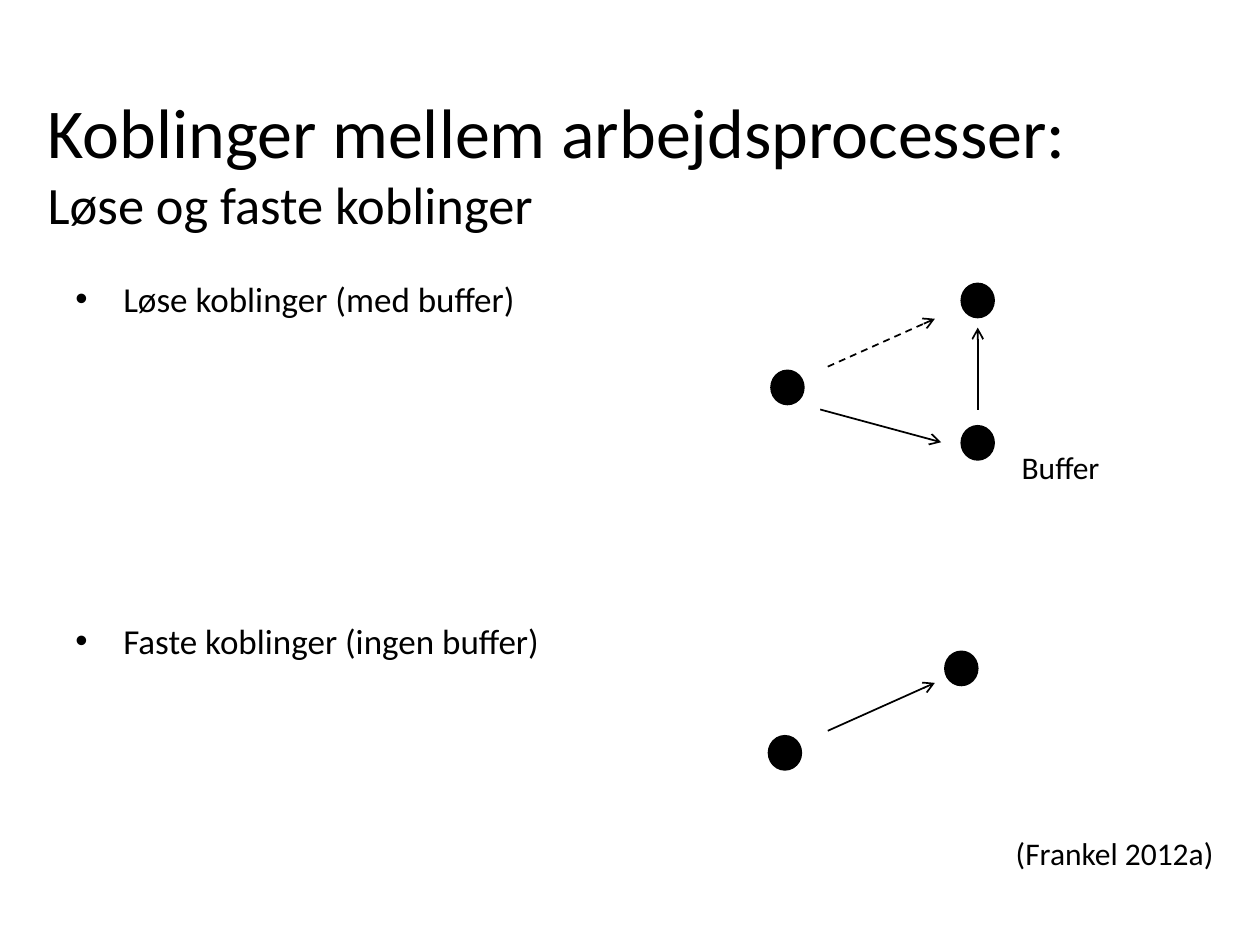
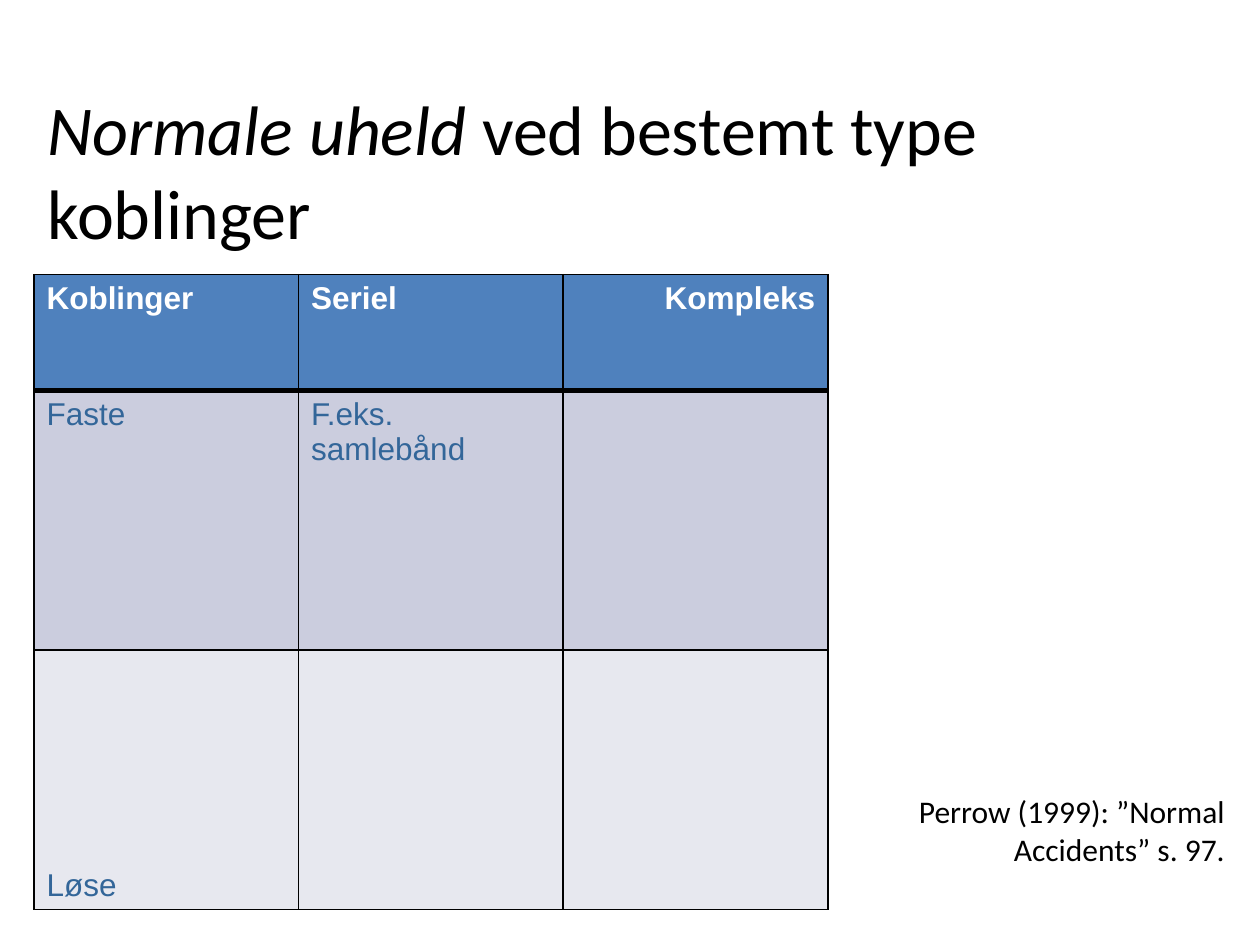
"""Build two slides on loose and tight couplings between work processes."""
from lxml.etree import SubElement
from pptx import Presentation
from pptx.dml.color import RGBColor
from pptx.enum.dml import MSO_LINE
from pptx.enum.shapes import MSO_CONNECTOR, MSO_SHAPE
from pptx.enum.text import MSO_ANCHOR, PP_ALIGN
from pptx.oxml.ns import qn
from pptx.util import Inches, Pt

COLORS = {
    "black": "000000",
    "white": "FFFFFF",
    "header": "4F81BD",
    "tight": "CBCDDE",
    "loose": "E7E8EF",
    "cell_text": "336699",
}
TITLE_SIZE, SUBTITLE_SIZE, BULLET_SIZE, NOTE_SIZE = 40, 30, 20, 18

COUPLING_TITLE = [[("Koblinger mellem arbejdsprocesser:", TITLE_SIZE, False)],
                  [("Løse og faste koblinger", SUBTITLE_SIZE, False)]]
ACCIDENT_TITLE = [[("Normale uheld ", TITLE_SIZE, True),
                   ("ved bestemt type koblinger", TITLE_SIZE, False)]]
BULLETS = [("Løse koblinger (med buffer)", 0), ("Faste koblinger (ingen buffer)", 171.5)]

NODE_SIZE = (0.26, 0.27)
NODES = [(7.63, 2.25), (6.12, 2.94), (7.63, 3.38), (6.1, 5.84), (7.5, 5.17)]
ARROWS = [
    ((6.57, 2.91), (7.42, 2.53), True),
    ((6.51, 3.25), (7.47, 3.51), False),
    ((7.76, 3.25), (7.76, 2.6), False),
    ((6.57, 5.8), (7.42, 5.42), False),
]

TABLE_ROWS = [
    ("header", 0.92, ["Koblinger", "Seriel", "Kompleks"]),
    ("tight", 2.06, ["Faste", "F.eks. samlebånd", ""]),
    ("loose", 2.06, ["Løse", "", ""]),
]
TABLE_LEFT, TABLE_TOP, COLUMN_WIDTH = 0.27, 2.18, 2.1
THIN, THICK = 1, 3


def color(name):
    return RGBColor.from_string(COLORS[name])


def add_span(para, text, size, font="Calibri", ink="black", bold=False, italic=False):
    span = para.add_run()
    span.text = text
    span.font.name = font
    span.font.size = Pt(size)
    span.font.bold = bold
    span.font.italic = italic
    span.font.color.rgb = color(ink)


def add_box(page, left, top, width, height):
    box = page.shapes.add_textbox(Inches(left), Inches(top), Inches(width), Inches(height))
    box.text_frame.word_wrap = True
    return box.text_frame


def add_title(page, top, lines):
    frame = add_box(page, 0.28, top, 9.45, 1.57)
    frame.margin_top = Inches(0.08)
    para = frame.paragraphs[0]
    for number, line in enumerate(lines):
        if number:
            para.add_line_break()
        for text, size, italic in line:
            add_span(para, text, size, italic=italic)


def add_note(page, place, text, align=PP_ALIGN.RIGHT):
    para = add_box(page, *place).paragraphs[0]
    para.alignment = align
    add_span(para, text, NOTE_SIZE)


def add_bullets(page):
    frame = add_box(page, 0.5, 1.75, 9.22, 5.46)
    frame.margin_top = Inches(0.45)
    for number, (text, gap) in enumerate(BULLETS):
        para = frame.add_paragraph() if number else frame.paragraphs[0]
        para.space_before = Pt(gap)
        properties = para._p.get_or_add_pPr()
        properties.set("marL", str(Inches(0.38)))
        properties.set("indent", str(-Inches(0.38)))
        SubElement(properties, qn("a:buFont"), typeface="Arial")
        SubElement(properties, qn("a:buChar"), char="•")
        add_span(para, text, BULLET_SIZE)


def add_node(page, left, top):
    node = page.shapes.add_shape(MSO_SHAPE.FLOWCHART_CONNECTOR, Inches(left), Inches(top),
                                 *map(Inches, NODE_SIZE))
    node.shadow.inherit = False
    node.fill.solid()
    node.fill.fore_color.rgb = color("black")
    node.line.color.rgb = color("black")
    node.line.width = Pt(1)


def add_arrow(page, start, end, dashed):
    arrow = page.shapes.add_connector(MSO_CONNECTOR.STRAIGHT, *map(Inches, start + end))
    arrow.line.color.rgb = color("black")
    arrow.line.width = Pt(1)
    if dashed:
        arrow.line.dash_style = MSO_LINE.DASH
    SubElement(arrow.line._get_or_add_ln(), qn("a:tailEnd"), type="arrow")
    SubElement(arrow._element.spPr, qn("a:effectLst"))


def set_borders(cell, top, bottom):
    properties = cell._tc.get_or_add_tcPr()
    sides = [("L", THIN), ("R", THIN), ("T", top), ("B", bottom)]
    for position, (side, width) in enumerate(sides):
        border = SubElement(properties, qn(f"a:ln{side}"), w=str(Pt(width)))
        fill = SubElement(border, qn("a:solidFill"))
        SubElement(fill, qn("a:srgbClr"), val=COLORS["black"])
        properties.insert(position, border)


def add_coupling_table(page):
    columns = len(TABLE_ROWS[0][2])
    height = sum(row_height for _, row_height, _ in TABLE_ROWS)
    table = page.shapes.add_table(len(TABLE_ROWS), columns, Inches(TABLE_LEFT), Inches(TABLE_TOP),
                                  Inches(columns * COLUMN_WIDTH), Inches(height)).table
    for column in table.columns:
        column.width = Inches(COLUMN_WIDTH)
    for row, (kind, row_height, texts) in enumerate(TABLE_ROWS):
        table.rows[row].height = Inches(row_height)
        is_header = kind == "header"
        for column, text in enumerate(texts):
            cell = table.cell(row, column)
            cell.fill.solid()
            cell.fill.fore_color.rgb = color(kind)
            set_borders(cell, THICK if row == 1 else THIN, THICK if is_header else THIN)
            if kind == "loose":
                cell.vertical_anchor = MSO_ANCHOR.BOTTOM
            if text:
                para = cell.text_frame.paragraphs[0]
                if is_header and column == columns - 1:
                    para.alignment = PP_ALIGN.RIGHT
                add_span(para, text, NOTE_SIZE, "Arial",
                         "white" if is_header else "cell_text", bold=is_header)


def build_coupling_page(page):
    add_title(page, 0.62, COUPLING_TITLE)
    add_bullets(page)
    for node in NODES:
        add_node(page, *node)
    for arrow in ARROWS:
        add_arrow(page, *arrow)
    add_note(page, (8.01, 3.51, 1.39, 0.5), "Buffer", PP_ALIGN.LEFT)
    add_note(page, (7.5, 6.57, 2.23, 0.49), "(Frankel 2012a)")


def build_accident_page(page):
    add_title(page, 0.6, ACCIDENT_TITLE)
    add_coupling_table(page)
    add_note(page, (7.08, 6.24, 2.74, 0.76), "Perrow (1999): ”Normal Accidents” s. 97.")


def main():
    deck = Presentation()
    deck.slide_width, deck.slide_height = Inches(10), Inches(7.5)
    for build in (build_coupling_page, build_accident_page):
        build(deck.slides.add_slide(deck.slide_layouts[6]))
    deck.save("out.pptx")


if __name__ == "__main__":
    main()
